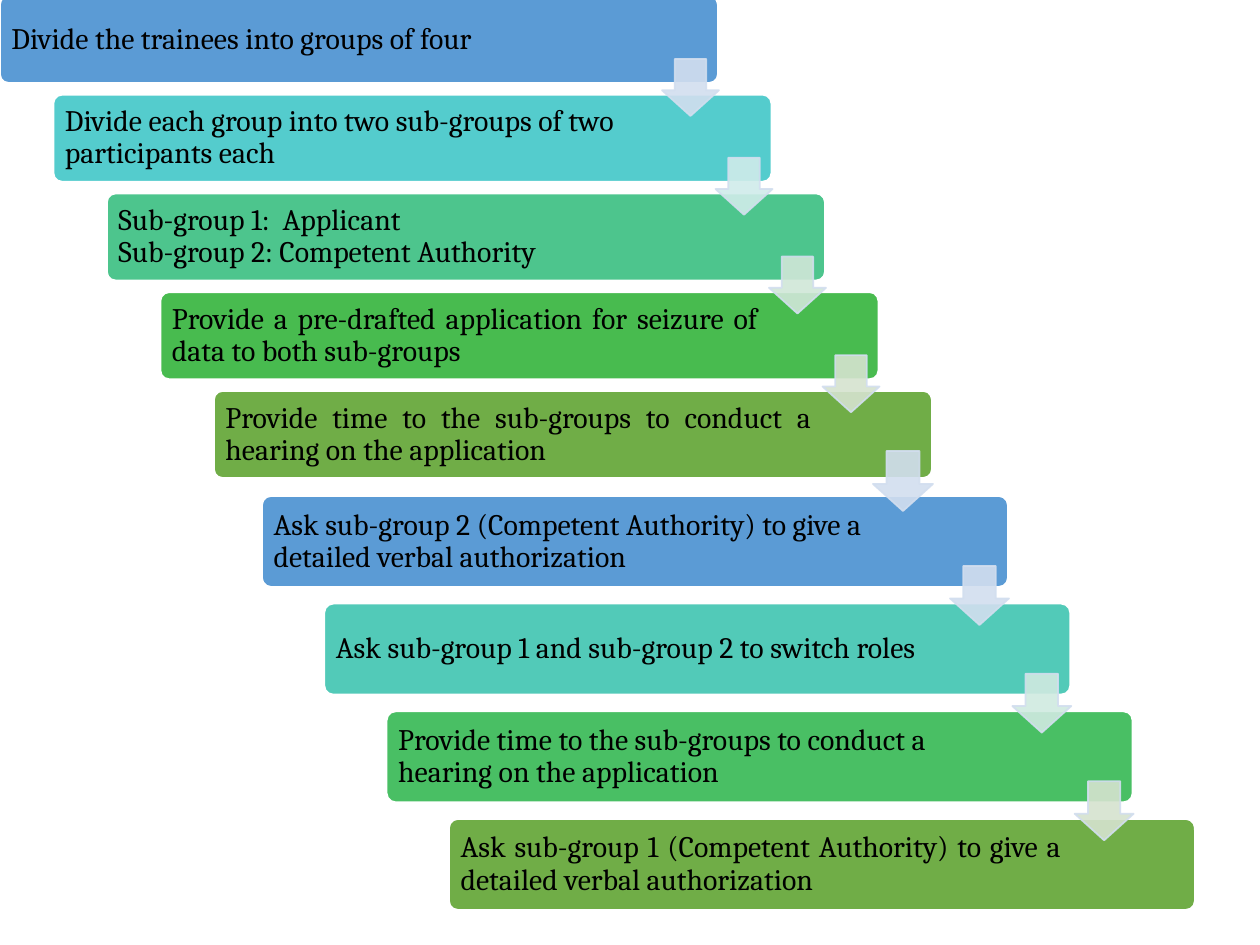
from dataclasses import dataclass

from lxml.etree import SubElement
from pptx import Presentation
from pptx.dml.color import RGBColor
from pptx.enum.shapes import MSO_SHAPE
from pptx.enum.text import MSO_ANCHOR, PP_ALIGN
from pptx.oxml.ns import qn
from pptx.util import Emu, Pt

PX_PER_INCH = 126


@dataclass(frozen=True)
class Theme:
    font: str = "Cambria"
    text_size: int = 17
    text: str = "000000"
    box_line: str = "FFFFFF"
    arrow_line: str = "D2DEEF"
    line_width: int = 1
    arrow_opacity: int = 90
    blue: str = "5B9BD5"
    cyan: str = "54CCCD"
    sea: str = "4DC58D"
    green: str = "48BB4F"
    olive: str = "70AD47"
    turquoise: str = "52CAB8"
    emerald: str = "49BF64"
    pale_blue: str = "D2DEEF"
    pale_cyan: str = "D0ECEA"
    pale_sea: str = "D0E7D8"
    pale_olive: str = "D5E3CF"
    pale_turquoise: str = "D0EAE1"


@dataclass(frozen=True)
class Staircase:
    first: tuple      # left and top of the first box
    last: tuple       # left and top of the last box
    box_size: tuple
    right_inset: int  # keeps text clear of the arrows
    arrow_offset: tuple
    arrow_size: int
    steps: list       # text, box colour, justified
    arrows: list      # colours of the arrows between boxes


def px(length):
    return Emu(round(length * 914400 / PX_PER_INCH))


def write_text(frame, text, *, font, size, color, align=PP_ALIGN.LEFT, spacing=0.9):
    para = frame.paragraphs[0]
    para.alignment = align
    para.line_spacing = spacing
    for number, line in enumerate(text.split("\n")):
        if number:
            para.add_line_break()
        span = para.add_run()
        span.text = line
        span.font.name = font
        span.font.size = Pt(size)
        span.font.color.rgb = RGBColor.from_string(color)


class SlideBuilder:
    def __init__(self, theme, slide):
        self.theme = theme
        self.slide = slide

    def shape(self, kind, left, top, width, height, fill, line, adjustments):
        shape = self.slide.shapes.add_shape(
            kind, px(left), px(top), px(width), px(height))
        shape.shadow.inherit = False
        shape.fill.solid()
        shape.fill.fore_color.rgb = RGBColor.from_string(fill)
        shape.line.color.rgb = RGBColor.from_string(line)
        shape.line.width = Pt(self.theme.line_width)
        for index, value in enumerate(adjustments):
            shape.adjustments[index] = value
        return shape

    def step_box(self, left, top, size, text, fill, justified, right_inset):
        box = self.shape(MSO_SHAPE.ROUNDED_RECTANGLE, left, top, *size,
                         fill, self.theme.box_line, [0.1])
        frame = box.text_frame
        frame.word_wrap = True
        frame.vertical_anchor = MSO_ANCHOR.MIDDLE
        frame.margin_left = frame.margin_top = frame.margin_bottom = px(9)
        frame.margin_right = px(right_inset)
        write_text(frame, text, font=self.theme.font, size=self.theme.text_size,
                   color=self.theme.text,
                   align=PP_ALIGN.JUSTIFY if justified else PP_ALIGN.LEFT)

    def arrow(self, left, top, size, fill):
        arrow = self.shape(MSO_SHAPE.DOWN_ARROW, left, top, size, size,
                           fill, self.theme.arrow_line, [0.55, 0.45])
        # Fill and outline share the same transparency
        for color in arrow._element.spPr.iter(qn("a:srgbClr")):
            SubElement(color, qn("a:alpha"), val=str(self.theme.arrow_opacity * 1000))

    def staircase(self, stairs):
        gaps = len(stairs.steps) - 1
        corners = [tuple(start + (end - start) * index / gaps
                         for start, end in zip(stairs.first, stairs.last))
                   for index in range(gaps + 1)]
        for corner, step in zip(corners, stairs.steps):
            self.step_box(*corner, stairs.box_size, *step, stairs.right_inset)
        across, down = stairs.arrow_offset
        for (left, top), color in zip(corners, stairs.arrows):
            self.arrow(left + across, top + down, stairs.arrow_size, color)


def main():
    theme = Theme()
    deck = Presentation()
    deck.slide_width, deck.slide_height = px(1260), px(945)
    page = SlideBuilder(theme, deck.slides.add_slide(deck.slide_layouts[6]))

    # Upper staircase: preparing and hearing the application
    page.staircase(Staircase(
        first=(0, -4), last=(214, 391), box_size=(718, 87), right_inset=118,
        arrow_offset=(662, 63), arrow_size=57,
        steps=[
            ("Divide the trainees into groups of four", theme.blue, False),
            ("Divide each group into two sub-groups of two participants each",
             theme.cyan, False),
            ("Sub-group 1:  Applicant\nSub-group 2: Competent Authority",
             theme.sea, False),
            ("Provide a pre-drafted application for seizure of data to both sub-groups",
             theme.green, True),
            ("Provide time to the sub-groups to conduct a hearing on the application",
             theme.olive, True),
        ],
        arrows=[theme.pale_blue, theme.pale_cyan, theme.pale_sea, theme.pale_olive]))

    # Lower staircase: authorization and switching roles
    page.staircase(Staircase(
        first=(262, 496), last=(449, 819), box_size=(746, 91), right_inset=131,
        arrow_offset=(688, 70), arrow_size=59,
        steps=[
            ("Ask sub-group 2 (Competent Authority) to give a detailed verbal authorization",
             theme.blue, False),
            ("Ask sub-group 1 and sub-group 2 to switch roles", theme.turquoise, False),
            ("Provide time to the sub-groups to conduct a hearing on the application",
             theme.emerald, False),
            ("Ask sub-group 1 (Competent Authority) to give a detailed verbal authorization",
             theme.olive, True),
        ],
        arrows=[theme.pale_blue, theme.pale_turquoise, theme.pale_olive]))

    # Arrow joining the two staircases
    page.arrow(873, 451, 60, theme.pale_blue)

    deck.save("out.pptx")


if __name__ == "__main__":
    main()
